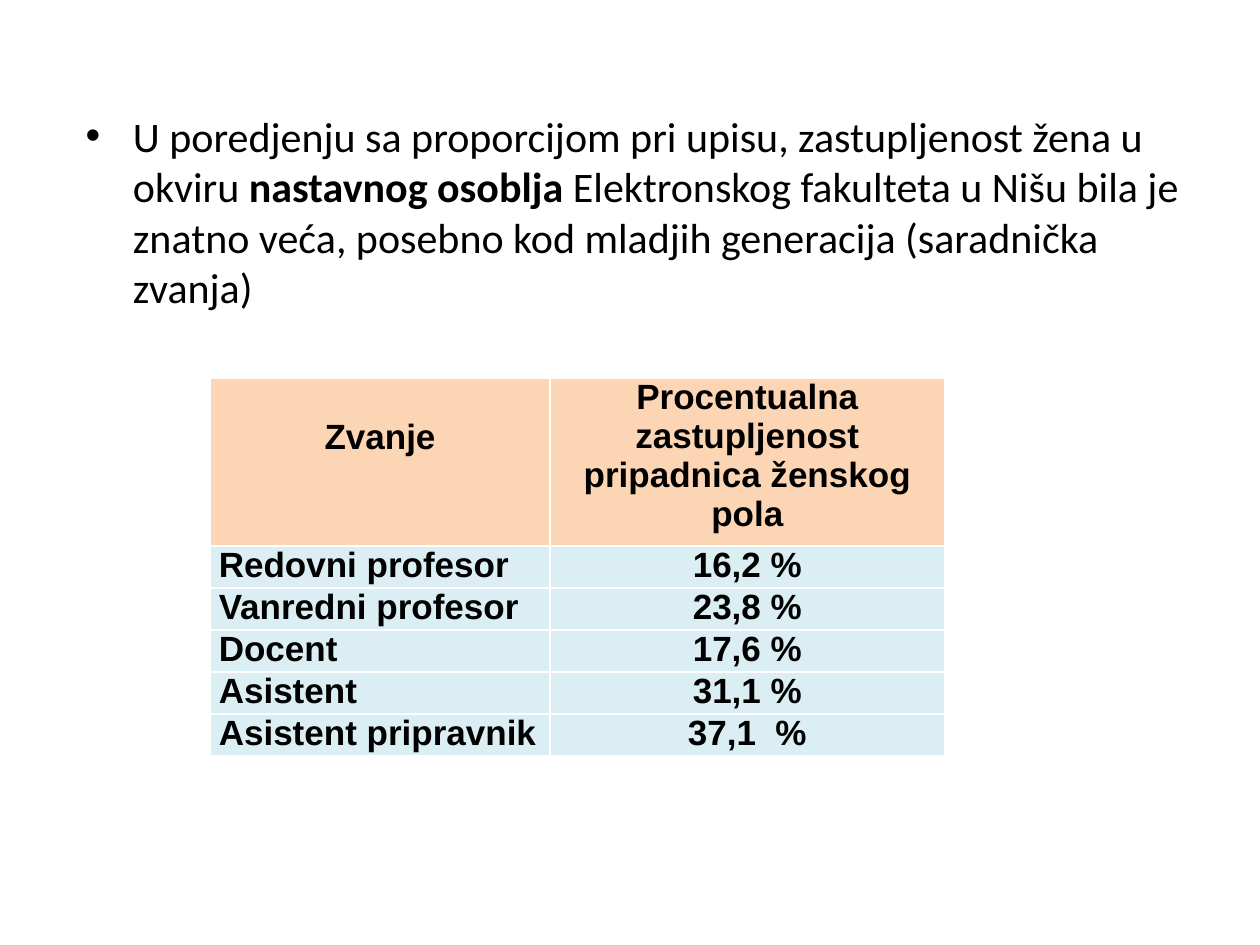
import pptx
import pptx.dml.color
import pptx.enum.text
import pptx.oxml
import pptx.oxml.ns
import pptx.util

WIDTH = pptx.util.Inches(10)
HEIGHT = pptx.util.Inches(7.5)
COLORS = {"text": "000000", "header": "FCD5B5", "body": "DBEEF4", "border": "FFFFFF"}
ALIGN = pptx.enum.text.PP_ALIGN
BODY_FONT = {"name": "Calibri", "size": pptx.util.Pt(24)}
TABLE_FONT = {"name": "Arial", "size": pptx.util.Pt(20), "bold": True}
CELL_MARGINS = {
    "margin_left": pptx.util.Inches(0.07),
    "margin_right": pptx.util.Inches(0.07),
    "margin_top": 0,
    "margin_bottom": 0,
}
HEADER_DROP = pptx.util.Inches(0.32)
BULLET_RUNS = [
    ("U poredjenju sa proporcijom pri upisu, zastupljenost žena u okviru ", False),
    ("nastavnog osoblja ", True),
    ("Elektronskog fakulteta u Nišu bila je znatno veća, posebno kod mladjih "
     "generacija (saradnička zvanja)", False),
]
TABLE_ROWS = [
    ("Zvanje", "Procentualna zastupljenost pripadnica ženskog pola"),
    ("Redovni profesor", "16,2 %"),
    ("Vanredni profesor", "23,8 %"),
    ("Docent", "17,6 %"),
    ("Asistent", "31,1 %"),
    ("Asistent pripravnik", "37,1  %"),
]


def set_attributes(target, values):
    """Set each named attribute of the target."""
    for name, value in values.items():
        setattr(target, name, value)


def add_run(paragraph, text, font_values):
    """Add a run of formatted text to a paragraph."""
    run = paragraph.add_run()
    run.text = text
    set_attributes(run.font, font_values)
    run.font.color.rgb = pptx.dml.color.RGBColor.from_string(COLORS["text"])


def fill_body(placeholder):
    """Place the body placeholder and write its bullet."""
    set_attributes(placeholder, {
        "left": int(WIDTH * 0.058),
        "top": int(HEIGHT * 0.11),
        "width": int(WIDTH * 0.9),
        "height": int(HEIGHT * 0.84),
    })
    paragraph = placeholder.text_frame.paragraphs[0]
    for text, bold in BULLET_RUNS:
        add_run(paragraph, text, {**BODY_FONT, "bold": bold})


def set_borders(cell):
    """Draw a thin line on all four sides of a cell."""
    properties = cell._tc.get_or_add_tcPr()
    for position, side in enumerate(("lnL", "lnR", "lnT", "lnB")):
        properties.insert(position, pptx.oxml.parse_xml(
            f'<a:{side} {pptx.oxml.ns.nsdecls("a")} w="{pptx.util.Pt(1)}"><a:solidFill>'
            f'<a:srgbClr val="{COLORS["border"]}"/></a:solidFill></a:{side}>'))


def fill_cell(cell, text, color, alignment, spacing):
    """Write and format one table cell."""
    set_attributes(cell, CELL_MARGINS)
    cell.fill.solid()
    cell.fill.fore_color.rgb = pptx.dml.color.RGBColor.from_string(COLORS[color])
    set_borders(cell)
    paragraph = cell.text_frame.paragraphs[0]
    set_attributes(paragraph, {
        "alignment": alignment,
        "space_before": pptx.util.Pt(spacing),
        "space_after": pptx.util.Pt(spacing),
    })
    add_run(paragraph, text, TABLE_FONT)


def add_rank_table(slide):
    """Add the table of academic ranks and shares of women."""
    unit = int(HEIGHT * 0.4 / 9)
    table = slide.shapes.add_table(
        len(TABLE_ROWS), 2, WIDTH // 6, int(HEIGHT * 0.4),
        int(WIDTH * 0.583), unit * 9).table
    set_attributes(table, {"first_row": False, "horz_banding": False})
    for column, share in zip(table.columns, (0.27, 0.313)):
        column.width = int(WIDTH * share)
    for row_index, texts in enumerate(TABLE_ROWS):
        header = row_index == 0
        table.rows[row_index].height = unit * (4 if header else 1)
        for column_index, text in enumerate(texts):
            centred = header or column_index == 1
            fill_cell(table.cell(row_index, column_index), text,
                      "header" if header else "body",
                      ALIGN.CENTER if centred else ALIGN.JUSTIFY,
                      6 if header else 3)
    heading = table.cell(0, 0)
    heading.margin_top = HEADER_DROP
    set_attributes(heading.text_frame.paragraphs[0], {"space_before": 0, "space_after": 0})


def main():
    """Build and save the slide."""
    presentation = pptx.Presentation()
    set_attributes(presentation, {"slide_width": WIDTH, "slide_height": HEIGHT})
    slide = presentation.slides.add_slide(presentation.slide_layouts[1])
    title = slide.shapes.title.element
    title.getparent().remove(title)
    fill_body(slide.placeholders[1])
    add_rank_table(slide)
    presentation.save("out.pptx")


if __name__ == "__main__":
    main()
